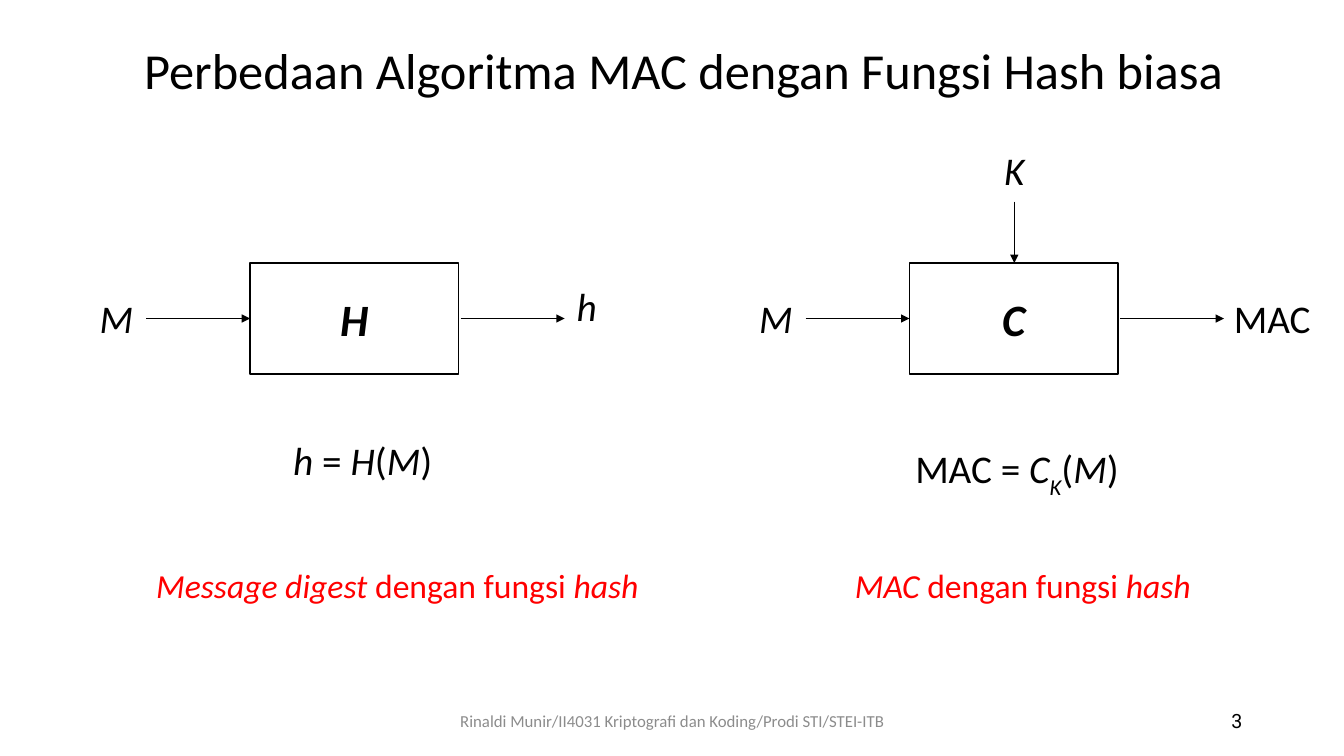
from pptx import Presentation
from pptx.dml.color import RGBColor
from pptx.enum.shapes import MSO_CONNECTOR, MSO_SHAPE
from pptx.enum.text import MSO_ANCHOR, MSO_AUTO_SIZE, PP_ALIGN
from pptx.oxml.ns import qn
from pptx.util import Inches, Pt
from lxml.etree import SubElement

COLORS = {"ink": "000000", "caption": "FF0000", "footer": "8C8C8C"}
PANEL_LEFTS = {"hash": 0.89, "mac": 7.43}
FLOW_Y = 3.16
BLOCK_TOP = 2.61


def color(name):
    return RGBColor.from_string(COLORS[name])


def write(frame, runs, size, ink="ink", font="Calibri",
          align=PP_ALIGN.LEFT, anchor=MSO_ANCHOR.TOP, wrap=False):
    frame.auto_size = MSO_AUTO_SIZE.NONE
    frame.word_wrap = wrap
    frame.vertical_anchor = anchor
    paragraph = frame.paragraphs[0]
    paragraph.alignment = align
    for text, style in runs:
        run = paragraph.add_run()
        run.text = text
        run.font.name = font
        run.font.size = Pt(size)
        run.font.color.rgb = color(ink)
        run.font.bold = "b" in style
        run.font.italic = "i" in style
        if "_" in style:
            run._r.get_or_add_rPr().set("baseline", "-30000")


def add_label(slide, box, runs, size=28, **options):
    label = slide.shapes.add_textbox(*map(Inches, box))
    write(label.text_frame, runs, size, **options)


def add_title(slide, text):
    title = slide.shapes.title
    title.left, title.top = Inches(1.33), Inches(0.34)
    title.width, title.height = Inches(11.01), Inches(0.71)
    write(title.text_frame, [(text, "")], 36)


def add_arrow(slide, start, end):
    arrow = slide.shapes.add_connector(
        MSO_CONNECTOR.STRAIGHT, *map(Inches, (*start, *end)))
    arrow.line.color.rgb = color("ink")
    arrow.line.width = Pt(1)
    SubElement(arrow.line._get_or_add_ln(), qn("a:tailEnd"), type="triangle")
    SubElement(arrow._element.spPr, qn("a:effectLst"))


def add_block(slide, left, letter):
    block = slide.shapes.add_shape(
        MSO_SHAPE.RECTANGLE, *map(Inches, (left, BLOCK_TOP, 2.07, 1.1)))
    block.shadow.inherit = False
    block.fill.background()
    block.line.color.rgb = color("ink")
    block.line.width = Pt(1)
    write(block.text_frame, [(letter, "bi")], 32, align=PP_ALIGN.CENTER,
          anchor=MSO_ANCHOR.MIDDLE, wrap=True)


def add_flow(slide, left, letter):
    add_block(slide, left + 1.59, letter)
    for start in (left + 0.56, left + 3.68):
        add_arrow(slide, (start, FLOW_Y), (start + 1.03, FLOW_Y))
    add_label(slide, (left, 2.87, 0.54, 0.57), [("M", "i")])


def add_caption(slide, box, subject):
    runs = [(subject, "i"), ("dengan fungsi ", ""), ("hash", "i")]
    add_label(slide, box, runs, 24, ink="caption")


def main():
    presentation = Presentation()
    presentation.slide_width = Inches(13.33)
    presentation.slide_height = Inches(7.5)
    slide = presentation.slides.add_slide(presentation.slide_layouts[5])

    add_title(slide, "Perbedaan Algoritma MAC dengan Fungsi Hash biasa")

    add_flow(slide, PANEL_LEFTS["hash"], "H")
    add_label(slide, (5.62, 2.75, 0.41, 0.57), [("h", "i")])
    add_label(slide, (2.81, 4.28, 1.6, 0.57),
              [("h ", "i"), ("= ", ""), ("H", "i"), ("(", ""), ("M", "i"), (")", "")])
    add_caption(slide, (1.45, 5.56, 5.01, 0.5), "Message digest ")

    add_flow(slide, PANEL_LEFTS["mac"], "C")
    add_label(slide, (12.14, 2.87, 0.97, 0.57), [("MAC", "")])
    add_arrow(slide, (10.06, 2), (10.06, BLOCK_TOP))
    add_label(slide, (9.86, 1.4, 0.62, 0.57), [("K", "i")], wrap=True)
    add_label(slide, (8.98, 4.36, 2.26, 0.57),
              [("MAC = ", ""), ("C", "i"), ("K", "i_"), ("(", ""), ("M", "i"), (")", "")])
    add_caption(slide, (8.38, 5.56, 3.57, 0.5), "MAC ")

    add_label(slide, (4.42, 6.95, 4.5, 0.4),
              [("Rinaldi Munir/II4031 Kriptografi dan Koding/Prodi STI/STEI-ITB", "")],
              12, ink="footer", align=PP_ALIGN.CENTER, anchor=MSO_ANCHOR.MIDDLE, wrap=True)
    add_label(slide, (9.42, 6.95, 3, 0.4), [("3", "")], 14, font="Roboto",
              align=PP_ALIGN.RIGHT, anchor=MSO_ANCHOR.MIDDLE, wrap=True)

    presentation.save("out.pptx")


if __name__ == "__main__":
    main()
